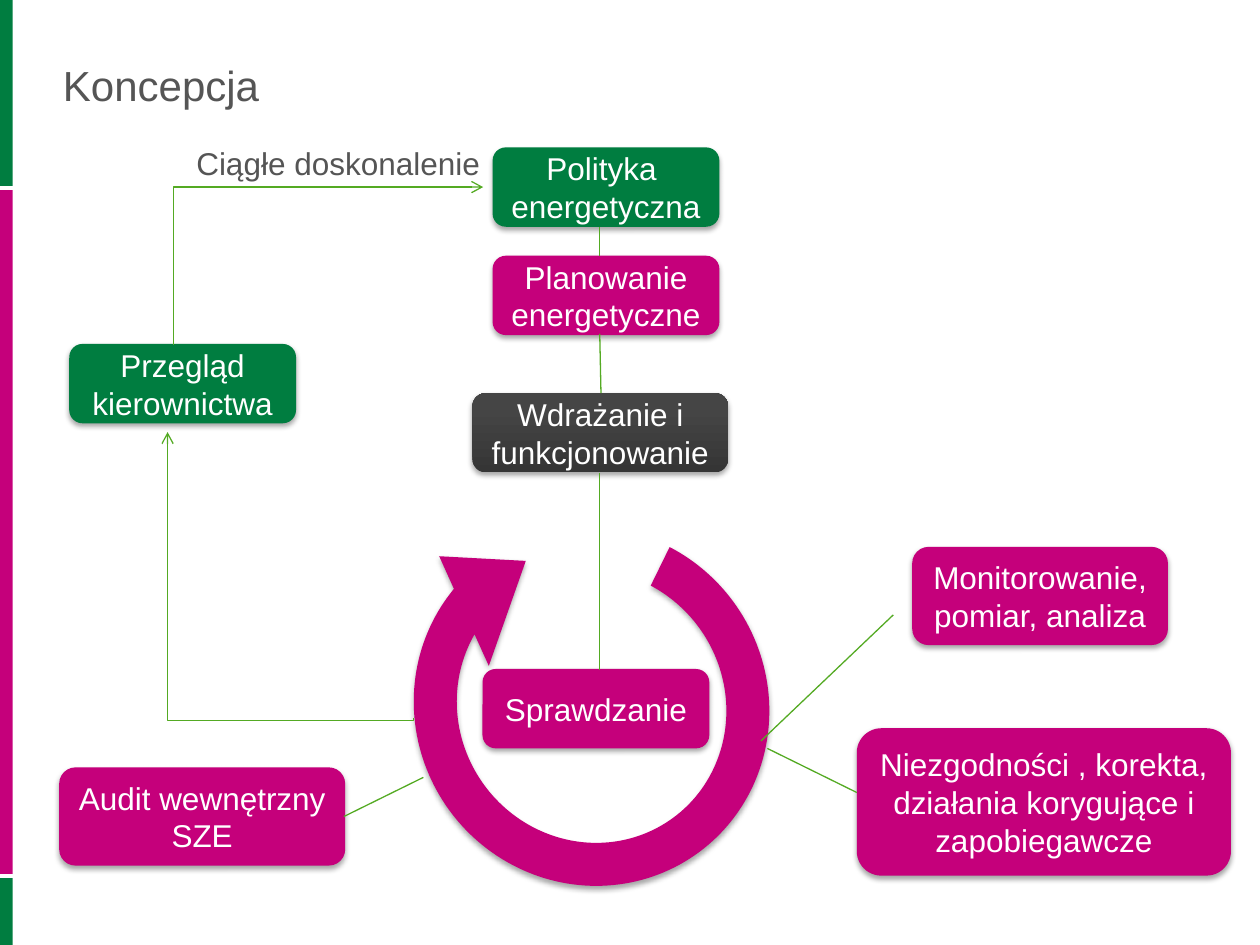
from dataclasses import dataclass
from lxml.etree import SubElement as Sub
from pptx import Presentation
from pptx.dml.color import RGBColor as Rgb
from pptx.enum.shapes import MSO_CONNECTOR as Conn, MSO_SHAPE as Geo
from pptx.enum.text import MSO_ANCHOR as Anchor, MSO_AUTO_SIZE as Fit, PP_ALIGN as Align
from pptx.oxml.ns import qn
from pptx.util import Inches, Pt


@dataclass(frozen=True)
class Theme:
    font: str = "Arial"
    head: int = 24
    body: int = 18
    pink: str = "C5007B"
    green: str = "007D40"
    lime: str = "54AA23"
    gray: str = "555555"
    dark: tuple = ("353535", "454545")
    white: str = "FFFFFF"


class Board:
    def __init__(self, slide, theme):
        self.slide = slide
        self.theme = theme

    def letter(self, shape, text, size, color, align):
        frame = shape.text_frame
        frame.text = text
        frame.vertical_anchor = Anchor.MIDDLE
        for para in frame.paragraphs:
            para.alignment = align
            for run in para.runs:
                run.font.name = self.theme.font
                run.font.size = Pt(size)
                run.font.color.rgb = Rgb.from_string(color)
        return frame

    def shade(self, shape):
        effects = shape._element.spPr.find(qn("a:effectLst"))
        drop = Sub(effects, qn("a:outerShdw"), blurRad=str(Pt(3.1)),
                   dist=str(Pt(1.8)), dir="5400000", rotWithShape="0")
        black = Sub(drop, qn("a:srgbClr"), val="000000")
        Sub(black, qn("a:alpha"), val="35000")

    def form(self, kind, box, fill):
        shape = self.slide.shapes.add_shape(kind, *map(Inches, box))
        shape.shadow.inherit = False
        shape.line.fill.background()
        if isinstance(fill, str):
            shape.fill.solid()
            shape.fill.fore_color.rgb = Rgb.from_string(fill)
        else:
            shape.fill.gradient()
            shape.fill.gradient_angle = 90
            for stop, color, place in zip(shape.fill.gradient_stops, fill, (0, 0.8)):
                stop.color.rgb = Rgb.from_string(color)
                stop.position = place
        return shape

    def card(self, text, box, fill):
        shape = self.form(Geo.ROUNDED_RECTANGLE, box, fill)
        self.shade(shape)
        frame = self.letter(shape, text, self.theme.body, self.theme.white, Align.CENTER)
        frame.word_wrap = True

    def cycle(self, box, turn, adjust):
        shape = self.form(Geo.CIRCULAR_ARROW, box, self.theme.pink)
        self.shade(shape)
        shape.rotation = turn
        for i, value in enumerate(adjust):
            shape.adjustments[i] = value

    def label(self, text, box, size):
        shape = self.slide.shapes.add_textbox(*map(Inches, box))
        return self.letter(shape, text, size, self.theme.gray, Align.LEFT)

    def line(self, ends, color, width=0.75, kind=Conn.STRAIGHT):
        link = self.slide.shapes.add_connector(kind, *map(Inches, ends))
        link.line.color.rgb = Rgb.from_string(color)
        link.line.width = Pt(width)
        Sub(link._element.spPr, qn("a:effectLst"))
        return link

    def elbow(self, ends, turn, preset, bend=None):
        link = self.line(ends, self.theme.lime, kind=Conn.ELBOW)
        props = link._element.spPr
        props.find(qn("a:xfrm")).set("rot", str(turn * 60000))
        geom = props.find(qn("a:prstGeom"))
        geom.set("prst", preset)
        if bend is not None:
            Sub(geom.find(qn("a:avLst")), qn("a:gd"), name="adj1", fmla=f"val {bend}")
        Sub(props.find(qn("a:ln")), qn("a:tailEnd"), type="arrow")


def main():
    deck = Presentation()
    deck.slide_width, deck.slide_height = Inches(10), Inches(7.5)
    theme = Theme()
    board = Board(deck.slides.add_slide(deck.slide_layouts[6]), theme)

    for top, high, fill in ((1.51, 5.43, theme.pink), (6.95, 0.55, theme.green),
                            (0, 1.49, theme.green)):
        board.form(Geo.RECTANGLE, (0, top, 0.1, high), fill)
    for y in (6.95, 1.49):
        board.line((0, y, 10, y), theme.white, 2.25)

    title = board.label("Koncepcja", (0.5, 0.3, 9, 0.79), theme.head)
    title.word_wrap = True
    title.margin_left = title.margin_right = title.margin_top = title.margin_bottom = 0
    title.paragraphs[0].line_spacing = 0.9

    cards = (
        ("Planowanie energetyczne", (3.91, 2.03, 1.8, 0.63), theme.pink),
        ("Sprawdzanie", (3.83, 5.31, 1.8, 0.63), theme.pink),
        ("Polityka \nenergetyczna", (3.91, 1.17, 1.8, 0.63), theme.green),
        ("Wdrażanie i funkcjonowanie", (3.75, 3.12, 2.03, 0.63), theme.dark),
        ("Monitorowanie, pomiar, analiza", (7.24, 4.34, 2.03, 0.78), theme.pink),
        ("Audit wewnętrzny SZE", (0.47, 6.09, 2.27, 0.78), theme.pink),
        ("Niezgodności , korekta, działania korygujące i zapobiegawcze",
         (6.8, 5.78, 2.97, 1.17), theme.pink),
        ("Przegląd kierownictwa", (0.55, 2.73, 1.8, 0.63), theme.green),
    )
    for text, box, fill in cards:
        board.card(text, box, fill)

    board.cycle((2.95, 3.9, 3.49, 3.41), 235.5, (0.1, 17.34, 204.75, 36.38, 0.14))
    board.elbow((1.17, 5.54, 3.44, 3.59), 270, "bentConnector3", -800)
    board.elbow((3.23, 3.34, 1.98, 0.88), 90, "bentConnector2")

    note = board.label("Ciągłe doskonalenie", (1.46, 1.09, 2.47, 0.4), theme.body)
    note.word_wrap = False
    note.auto_size = Fit.SHAPE_TO_FIT_TEXT

    for ends in ((2.73, 6.48, 3.36, 6.17), (4.76, 1.8, 4.76, 2.03),
                 (4.76, 2.65, 4.77, 3.12), (4.76, 3.75, 4.76, 5.32),
                 (6.04, 5.88, 7.09, 4.88), (6.09, 5.94, 6.8, 6.29)):
        board.line(ends, theme.lime)

    deck.save("out.pptx")


if __name__ == "__main__":
    main()
